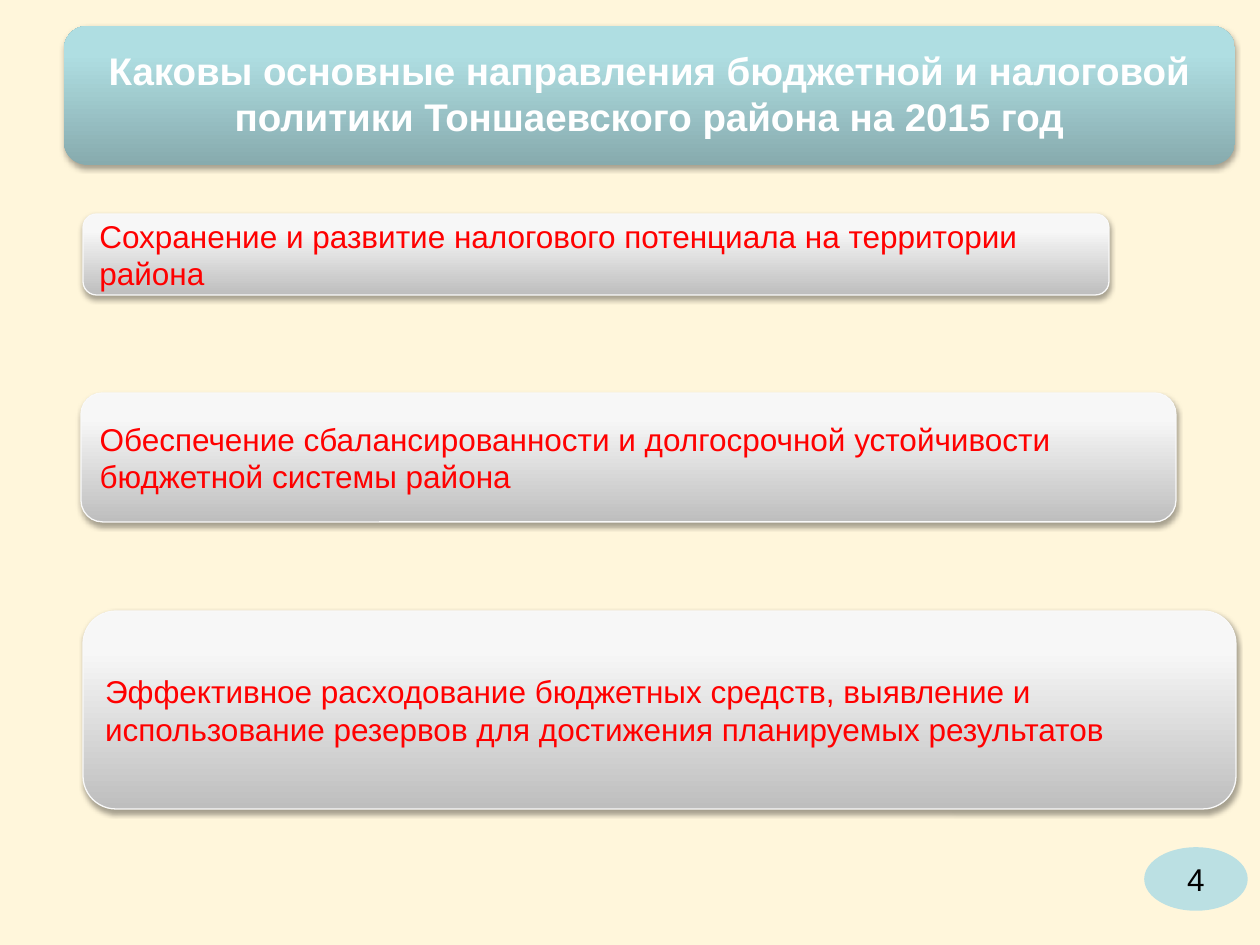
from copy import deepcopy

from lxml.etree import SubElement
from pptx import Presentation
from pptx.dml.color import RGBColor
from pptx.enum.shapes import MSO_SHAPE
from pptx.enum.text import MSO_ANCHOR, PP_ALIGN
from pptx.oxml.ns import qn
from pptx.util import Emu, Pt

EMU_PER_PX = 914400 / 126


def box(*lengths):
    return [Emu(round(length * EMU_PER_PX)) for length in lengths]


def rgb(value):
    return RGBColor.from_string(value)


deck = Presentation()
deck.slide_width, deck.slide_height = box(1260, 945)
slide = deck.slides.add_slide(deck.slide_layouts[5])
slide.background.fill.solid()
slide.background.fill.fore_color.rgb = rgb("FFF6DB")

silver = ["BEBEBE", "F7F7F7", "F8F8F8"]
teal = ["87ABAE", "AFDEE2", "AFE0E4"]
panels = [
    (83, 611, 1153, 198, silver, [
        "Эффективное расходование бюджетных средств, выявление и",
        "использование резервов для достижения планируемых результатов"]),
    (81, 393, 1095, 129, silver, [
        "Обеспечение сбалансированности и долгосрочной устойчивости "
        "бюджетной системы района"]),
    (83, 214, 1026, 81, silver, [
        "Сохранение и развитие налогового потенциала на территории района"]),
    (64, 26, 1171, 139, teal, []),
]

for left, top, width, height, shades, directions in panels:
    panel = slide.shapes.add_shape(
        MSO_SHAPE.ROUNDED_RECTANGLE, *box(left, top, width, height))
    panel.fill.gradient()
    panel.fill.gradient_angle = 90
    stops = panel._element.spPr.find(qn("a:gradFill")).find(qn("a:gsLst"))
    stops.append(deepcopy(stops[-1]))
    for stop, position, shade in zip(panel.fill.gradient_stops, [0, 0.8, 1], shades):
        stop.position = position
        stop.color.rgb = rgb(shade)

    if directions:
        panel.line.color.rgb = rgb("F9F9F9")
        panel.line.width = Pt(0.75)
    else:
        panel.line.fill.background()

    panel.shadow.inherit = False
    effects = panel._element.spPr.find(qn("a:effectLst"))
    shadow = SubElement(effects, qn("a:outerShdw"), blurRad="40000",
                        dist="23000", dir="5400000", rotWithShape="0")
    shadow_color = SubElement(shadow, qn("a:srgbClr"), val="000000")
    SubElement(shadow_color, qn("a:alpha"), val="35000")

    panel.text_frame.text = "\n".join(directions)
    panel.text_frame.vertical_anchor = MSO_ANCHOR.MIDDLE
    for paragraph in panel.text_frame.paragraphs:
        paragraph.alignment = PP_ALIGN.LEFT
        paragraph.font.name = "Arial"
        paragraph.font.size = Pt(18)
        paragraph.font.color.rgb = rgb("FF0000")

title = slide.shapes.title
panel._element.addnext(title._element)
title.left, title.top, title.width, title.height = box(70, 43, 1159, 100)
title.text_frame.text = ("Каковы основные направления бюджетной и налоговой "
                         "политики Тоншаевского района на 2015 год")
title.text_frame.vertical_anchor = MSO_ANCHOR.MIDDLE
heading = title.text_frame.paragraphs[0]
heading.alignment = PP_ALIGN.CENTER
heading.font.name = "Arial"
heading.font.size = Pt(22)
heading.font.bold = True
heading.font.color.rgb = rgb("FFFFFF")

page_badge = slide.shapes.add_shape(MSO_SHAPE.OVAL, *box(1146, 849, 100, 60))
page_badge.shadow.inherit = False
page_badge.fill.solid()
page_badge.fill.fore_color.rgb = rgb("BBE0E3")
page_badge.line.color.rgb = rgb("BBE0E3")
page_badge.line.width = Pt(2)
page_badge.text_frame.text = "4"
page_badge.text_frame.vertical_anchor = MSO_ANCHOR.MIDDLE
page_number = page_badge.text_frame.paragraphs[0]
page_number.alignment = PP_ALIGN.CENTER
page_number.font.name = "Arial"
page_number.font.size = Pt(18)
page_number.font.color.rgb = rgb("000000")

deck.save("out.pptx")
